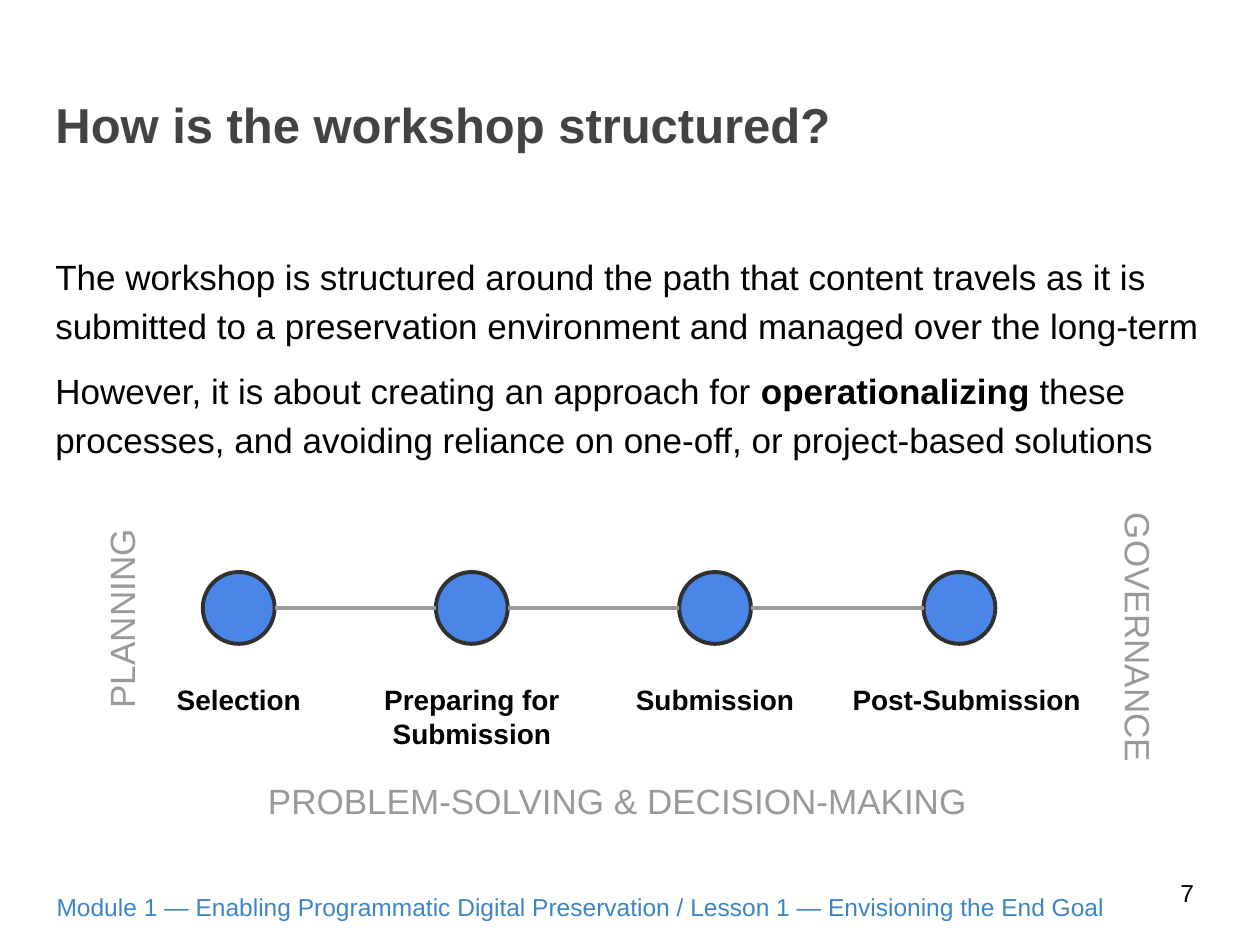
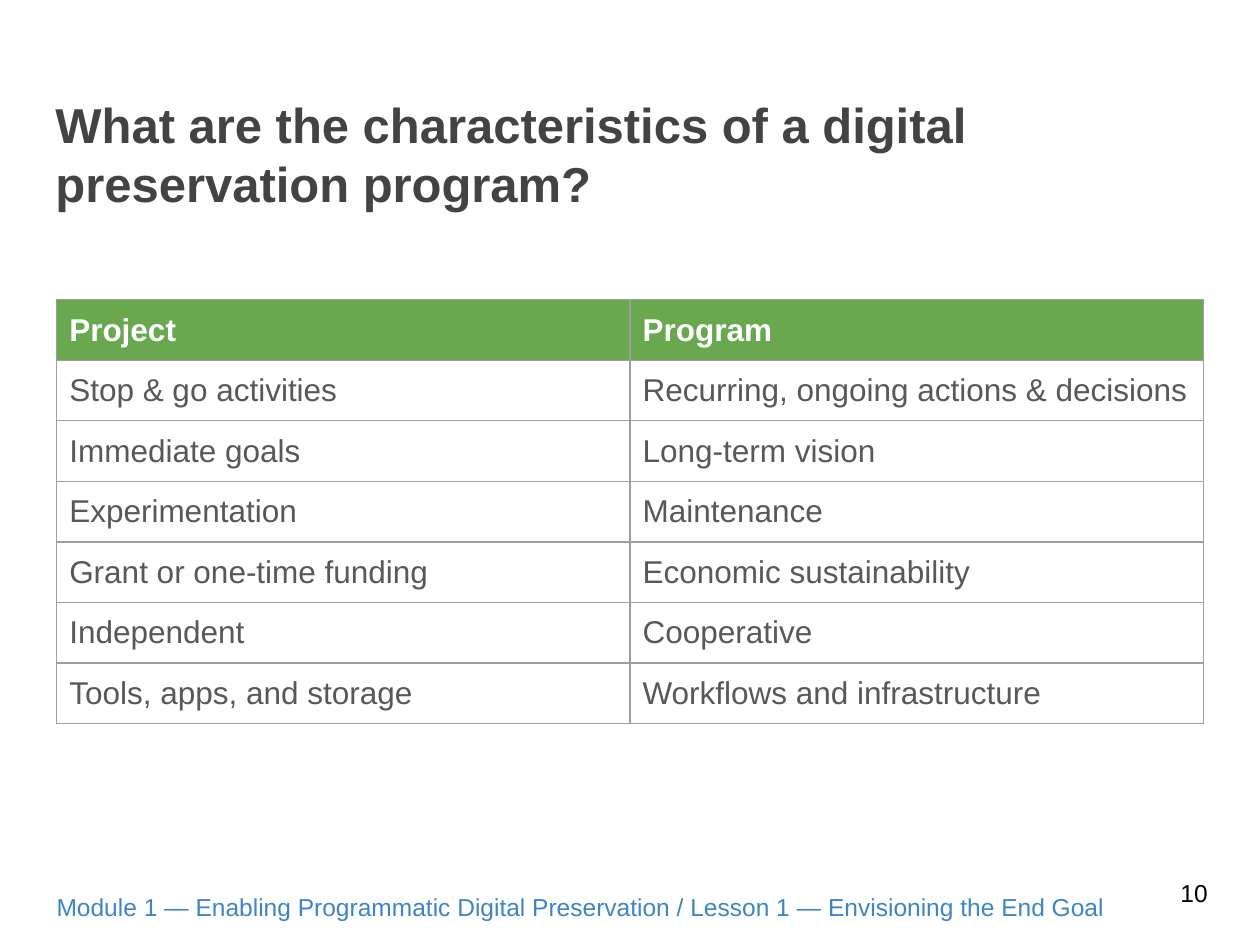
from dataclasses import dataclass

from lxml import etree
from pptx import Presentation
from pptx.dml.color import RGBColor
from pptx.enum.shapes import MSO_CONNECTOR, MSO_SHAPE
from pptx.enum.text import MSO_ANCHOR, MSO_AUTO_SIZE, PP_ALIGN
from pptx.oxml.ns import qn
from pptx.slide import Slide
from pptx.util import Inches, Pt

LEFT, CENTER, RIGHT = PP_ALIGN.LEFT, PP_ALIGN.CENTER, PP_ALIGN.RIGHT
TOP, MIDDLE = MSO_ANCHOR.TOP, MSO_ANCHOR.MIDDLE
NO_AUTOFIT = MSO_AUTO_SIZE.NONE
OVAL, STRAIGHT = MSO_SHAPE.OVAL, MSO_CONNECTOR.STRAIGHT

FONT = "Arial"
BLACK = RGBColor(0x00, 0x00, 0x00)
WHITE = RGBColor(0xFF, 0xFF, 0xFF)
TITLE_GRAY = RGBColor(0x43, 0x43, 0x43)
CELL_GRAY = RGBColor(0x58, 0x58, 0x58)
THEME_GRAY = RGBColor(0x99, 0x99, 0x99)
BORDER_GRAY = RGBColor(0x9E, 0x9E, 0x9E)
FOOTER_BLUE = RGBColor(0x3D, 0x85, 0xC6)
STEP_BLUE = RGBColor(0x4A, 0x86, 0xE8)
STEP_OUTLINE = RGBColor(0x30, 0x30, 0x30)
HEADER_GREEN = RGBColor(0x6A, 0xA8, 0x4F)

INSET = Inches(0.1)
FOOTER = "Module 1 — Enabling Programmatic Digital Preservation / Lesson 1 — Envisioning the End Goal"


@dataclass(frozen=True)
class Box:
    left: float
    top: float
    width: float
    height: float

    def inches(self) -> tuple:
        return tuple(Inches(v) for v in (self.left, self.top, self.width, self.height))


@dataclass(frozen=True)
class Style:
    size: int
    color: RGBColor
    bold: bool = False
    align: PP_ALIGN = LEFT


@dataclass(frozen=True)
class Step:
    label: str
    left: float
    align: PP_ALIGN = CENTER


@dataclass(frozen=True)
class Theme:
    text: str
    box: Box
    rotation: int = 0


TITLE_BOX = Box(0.34, 0.65, 9.32, 0.83)
BODY_BOX = Box(0.34, 1.88, 9.32, 1.05)
NUMBER_BOX = Box(9.27, 6.8, 0.6, 0.57)
FOOTER_BOX = Box(0.35, 6.98, 9.05, 0.4)

TITLE_STYLE = Style(28, TITLE_GRAY, bold=True)
BODY_STYLE = Style(20, BLACK)
NUMBER_STYLE = Style(14, BLACK)
FOOTER_STYLE = Style(14, FOOTER_BLUE)
THEME_STYLE = Style(20, THEME_GRAY, align=CENTER)
HEADER_STYLE = Style(18, WHITE, bold=True)
CELL_STYLE = Style(18, CELL_GRAY)

# Each paragraph is a list of (text, bold) runs
BODY = [
    [("The workshop is structured around the path that content travels as it is "
      "submitted to a preservation environment and managed over the long-term", False)],
    [("However, it is about creating an approach for ", False),
     ("operationalizing", True),
     (" these processes, and avoiding reliance on one-off, or project-based solutions", False)],
]

STEP_TOP, STEP_SIZE, STEP_LINE = 4.54, 0.57, Pt(2.25)
LABEL_TOP, LABEL_WIDTH = 5.32, 2.12
STEPS = [
    Step("Selection", 1.61),
    Step("Preparing for Submission", 3.46),
    Step("Submission", 5.39),
    Step("Post-Submission", 7.33, RIGHT),
]
THEMES = [
    Theme("PLANNING", Box(-0.09, 4.71, 1.97, 0.4), 270),
    Theme("GOVERNANCE", Box(7.92, 4.86, 2.37, 0.4), 90),
    Theme("PROBLEM-SOLVING & DECISION-MAKING", Box(1.07, 6.09, 7.66, 0.4)),
]

TABLE_LEFT, TABLE_TOP = 0.45, 2.38
COLUMN_WIDTH, ROW_HEIGHT = 4.55, 0.48
COMPARISON = [
    ("Project", "Program"),
    ("Stop & go activities", "Recurring, ongoing actions & decisions"),
    ("Immediate goals", "Long-term vision"),
    ("Experimentation", "Maintenance"),
    ("Grant or one-time funding", "Economic sustainability"),
    ("Independent", "Cooperative"),
    ("Tools, apps, and storage", "Workflows and infrastructure"),
]


# Text helpers
def style_paragraph(paragraph, style: Style) -> None:
    paragraph.alignment = style.align
    font = paragraph.font
    font.name, font.size, font.bold = FONT, Pt(style.size), style.bold
    font.color.rgb = style.color


def set_insets(target) -> None:
    target.margin_left = target.margin_right = INSET
    target.margin_top = target.margin_bottom = INSET


def prepare_frame(frame, anchor: MSO_ANCHOR = TOP) -> None:
    frame.word_wrap = True
    frame.auto_size = NO_AUTOFIT
    frame.vertical_anchor = anchor
    set_insets(frame)


def add_text(slide: Slide, text: str, box: Box, style: Style,
             anchor: MSO_ANCHOR = TOP, rotation: int = 0) -> None:
    text_box = slide.shapes.add_textbox(*box.inches())
    text_box.rotation = rotation
    frame = text_box.text_frame
    prepare_frame(frame, anchor)
    frame.text = text
    style_paragraph(frame.paragraphs[0], style)


# Shared slide parts
def add_slide(prs, title: str, number: int) -> Slide:
    slide = prs.slides.add_slide(prs.slide_layouts.get_by_name("Title Only"))
    heading = slide.shapes.title
    heading.left, heading.top, heading.width, heading.height = TITLE_BOX.inches()
    prepare_frame(heading.text_frame)
    heading.text_frame.text = title
    style_paragraph(heading.text_frame.paragraphs[0], TITLE_STYLE)
    add_text(slide, str(number), NUMBER_BOX, NUMBER_STYLE, MIDDLE)
    add_text(slide, FOOTER, FOOTER_BOX, FOOTER_STYLE)
    return slide


# Workshop path
def add_body(slide: Slide) -> None:
    frame = slide.shapes.add_textbox(*BODY_BOX.inches()).text_frame
    prepare_frame(frame)
    for index, runs in enumerate(BODY):
        paragraph = frame.add_paragraph() if index else frame.paragraphs[0]
        style_paragraph(paragraph, BODY_STYLE)
        paragraph.line_spacing = 1.15
        paragraph.space_after = Pt(10)
        for text, bold in runs:
            run = paragraph.add_run()
            run.text = text
            if bold:
                run.font.bold = True


def add_step(slide: Slide, step: Step) -> None:
    circle = slide.shapes.add_shape(
        OVAL, *Box(step.left, STEP_TOP, STEP_SIZE, STEP_SIZE).inches())
    circle.shadow.inherit = False
    circle.fill.solid()
    circle.fill.fore_color.rgb = STEP_BLUE
    circle.line.color.rgb = STEP_OUTLINE
    circle.line.width = STEP_LINE
    label_left = step.left + (STEP_SIZE - LABEL_WIDTH) / 2
    add_text(slide, step.label, Box(label_left, LABEL_TOP, LABEL_WIDTH, STEP_SIZE),
             Style(16, BLACK, bold=True, align=step.align))


def add_link(slide: Slide, start: Step, end: Step) -> None:
    middle = Inches(STEP_TOP + STEP_SIZE / 2)
    link = slide.shapes.add_connector(
        STRAIGHT, Inches(start.left + STEP_SIZE), middle, Inches(end.left), middle)
    link.line.color.rgb = THEME_GRAY
    link.line.width = STEP_LINE
    etree.SubElement(link._element.spPr, qn("a:effectLst"))


# Comparison table
def add_borders(cell) -> None:
    properties = cell._tc.get_or_add_tcPr()
    for side in ("a:lnL", "a:lnR", "a:lnT", "a:lnB"):
        line = etree.SubElement(properties, qn(side), w=str(Pt(0.75)))
        fill = etree.SubElement(line, qn("a:solidFill"))
        etree.SubElement(fill, qn("a:srgbClr"), val=str(BORDER_GRAY))


def add_comparison(slide: Slide) -> None:
    rows, columns = len(COMPARISON), len(COMPARISON[0])
    box = Box(TABLE_LEFT, TABLE_TOP, columns * COLUMN_WIDTH, rows * ROW_HEIGHT)
    table = slide.shapes.add_table(rows, columns, *box.inches()).table
    table.horz_banding = False
    for row, texts in enumerate(COMPARISON):
        for column, text in enumerate(texts):
            cell = table.cell(row, column)
            cell.text = text
            set_insets(cell)
            add_borders(cell)
            if row == 0:
                cell.fill.solid()
                cell.fill.fore_color.rgb = HEADER_GREEN
            else:
                cell.fill.background()
            style_paragraph(cell.text_frame.paragraphs[0],
                            CELL_STYLE if row else HEADER_STYLE)


def main() -> None:
    prs = Presentation()
    prs.slide_width, prs.slide_height = Inches(10), Inches(7.5)

    structure = add_slide(prs, "How is the workshop structured?", 7)
    add_body(structure)
    for step in STEPS:
        add_step(structure, step)
    for start, end in zip(STEPS, STEPS[1:]):
        add_link(structure, start, end)
    for theme in THEMES:
        add_text(structure, theme.text, theme.box, THEME_STYLE, rotation=theme.rotation)

    characteristics = add_slide(
        prs, "What are the characteristics of a digital preservation program?", 10)
    add_comparison(characteristics)

    prs.save("out.pptx")


if __name__ == "__main__":
    main()
